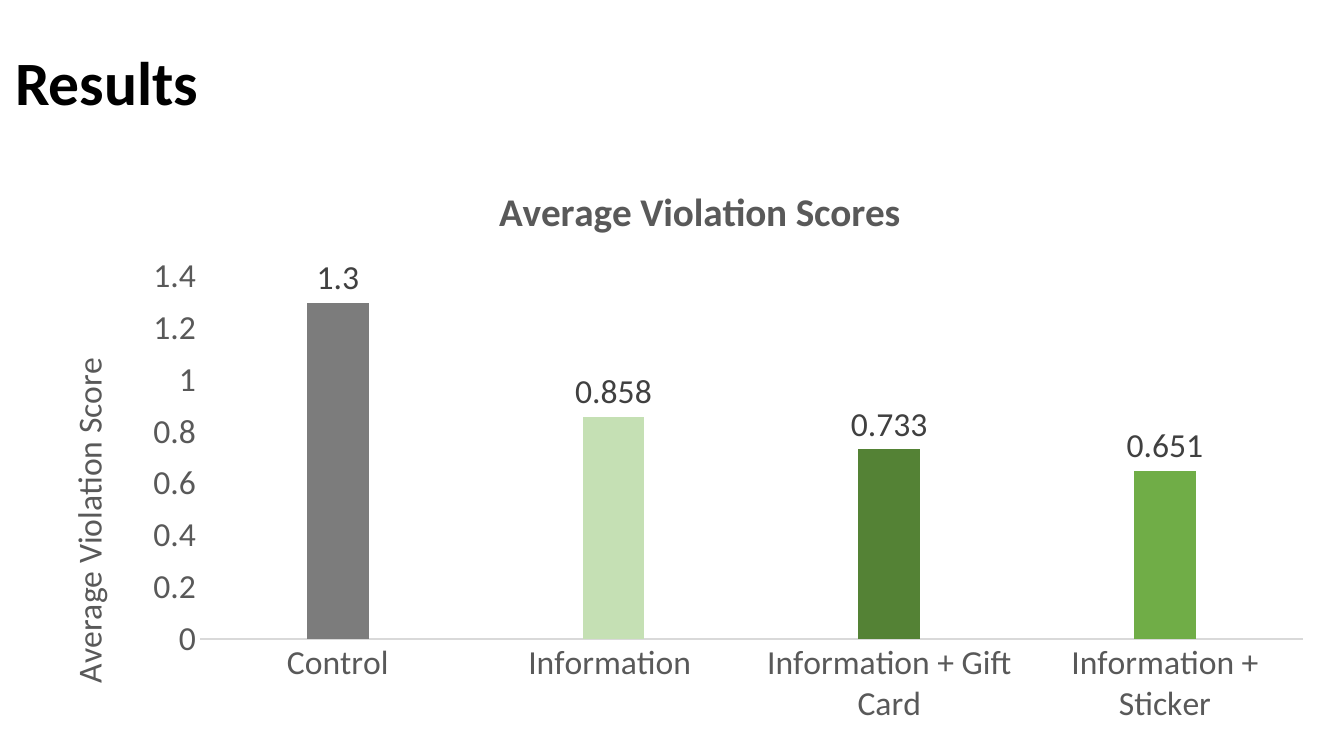
from lxml.etree import SubElement as Sub
from pptx import Presentation
from pptx.chart.data import CategoryChartData as Data
from pptx.dml.color import RGBColor as RGB
from pptx.enum.chart import XL_CHART_TYPE as Kind, XL_LABEL_POSITION as Pos, XL_TICK_MARK as Tick
from pptx.enum.text import MSO_ANCHOR as Anchor, PP_ALIGN as Align
from pptx.oxml.ns import qn
from pptx.util import Pt

SCALE = 12192000 / 1344
INK = {"black": "000000", "text": "595959", "label": "404040", "line": "D9D9D9",
       "grey": "7C7C7C", "pale": "C5E0B4", "dark": "548235", "green": "70AD47",
       "blue": "3E70CA", "silver": "A5A5A5"}
SCORES = {"Control": (1.3, "grey"), "Information ": (0.858, "pale"),
          "Information + Gift Card": (0.733, "dark"),
          "Information + Sticker": (0.651, "green")}


def px(n):
    return round(n * SCALE)


def color(name):
    return RGB.from_string(INK[name])


def style(font, size=24, ink="text", bold=False):
    font.name, font.size, font.bold = "Calibri", Pt(size), bold
    font.color.rgb = color(ink)


def write(frame, text, align=None, **form):
    frame.text = text
    para = frame.paragraphs[0]
    para.alignment = align
    style(para.runs[0].font, **form)
    return para


def paint(fill, ink):
    fill.solid()
    fill.fore_color.rgb = color(ink)


def place(node, index, **spots):
    for old in node.findall(qn("c:layout")):
        node.remove(old)
    outer = Sub(node, qn("c:layout"))
    node.remove(outer)
    node.insert(index, outer)
    inner = Sub(outer, qn("c:manualLayout"))
    if "w" in spots:
        Sub(inner, qn("c:layoutTarget")).set("val", "inner")
    for key in ("x", "y"):
        Sub(inner, qn(f"c:{key}Mode")).set("val", "edge")
    for key, value in spots.items():
        Sub(inner, qn(f"c:{key}")).set("val", str(round(value, 4)))


class Page:
    def __init__(self, deck):
        self.slide = deck.slides.add_slide(deck.slide_layouts[5])

    def title(self, text, x, y, w, h):
        box = self.slide.shapes.title
        box.left, box.top, box.width, box.height = map(px, (x, y, w, h))
        frame = box.text_frame
        frame.vertical_anchor = Anchor.MIDDLE
        para = write(frame, text, Align.LEFT, size=44, ink="black", bold=True)
        para.line_spacing = 0.9

    def chart(self, x, y, w, h):
        data = Data()
        data.categories = list(SCORES)
        blank = [None] * len(SCORES)
        data.add_series("Series 1", blank)
        data.add_series("Series 2", [score for score, _ in SCORES.values()])
        data.add_series("Series 3", blank)
        chart = self.slide.shapes.add_chart(
            Kind.COLUMN_CLUSTERED, *map(px, (x, y, w, h)), data).chart
        style(chart.font, ink="black")
        chart.has_legend = False
        head = chart.chart_title
        write(head.text_frame, "Average Violation Scores", size=28, bold=True)
        place(head._element, 1, x=(492 - x) / w, y=(178 - y) / h)
        self.axes(chart, x, y, w, h)
        self.bars(chart.plots[0])
        area = chart._chartSpace.chart.plotArea
        place(area, 0, x=(200 - x) / w, y=(277 - y) / h, w=1103 / w, h=362 / h)

    def axes(self, chart, x, y, w, h):
        for axis in (chart.category_axis, chart.value_axis):
            axis.major_tick_mark = axis.minor_tick_mark = Tick.NONE
            axis.has_major_gridlines = False
            style(axis.tick_labels.font)
        line = chart.category_axis.format.line
        line.color.rgb, line.width = color("line"), Pt(1)
        axis = chart.value_axis
        axis.minimum_scale, axis.maximum_scale, axis.major_unit = 0, 1.4, 0.2
        axis.format.line.fill.background()
        name = axis.axis_title
        write(name.text_frame, "Average Violation Score")
        body = name.text_frame._txBody.bodyPr
        body.set("rot", "-5400000")
        body.set("vert", "horz")
        place(name._element, 1, x=(60 - x) / w, y=(352 - y) / h)

    def bars(self, plot):
        plot.gap_width, plot.overlap, plot.vary_by_categories = 100, -24, False
        for row, ink in zip(plot.series, ("blue", "pale", "silver")):
            paint(row.format.fill, ink)
        row = plot.series[1]
        for i, (_, ink) in enumerate(SCORES.values()):
            paint(row.points[i].format.fill, ink)
        tags = row.data_labels
        tags.show_value = True
        tags.position = Pos.OUTSIDE_END
        style(tags.font, ink="label")


def main():
    deck = Presentation()
    deck.slide_width, deck.slide_height = px(1344), px(756)
    page = Page(deck)
    page.title("Results", 5, 13, 1159, 146)
    page.chart(48, 154, 1280, 583)
    deck.save("out.pptx")


if __name__ == "__main__":
    main()
